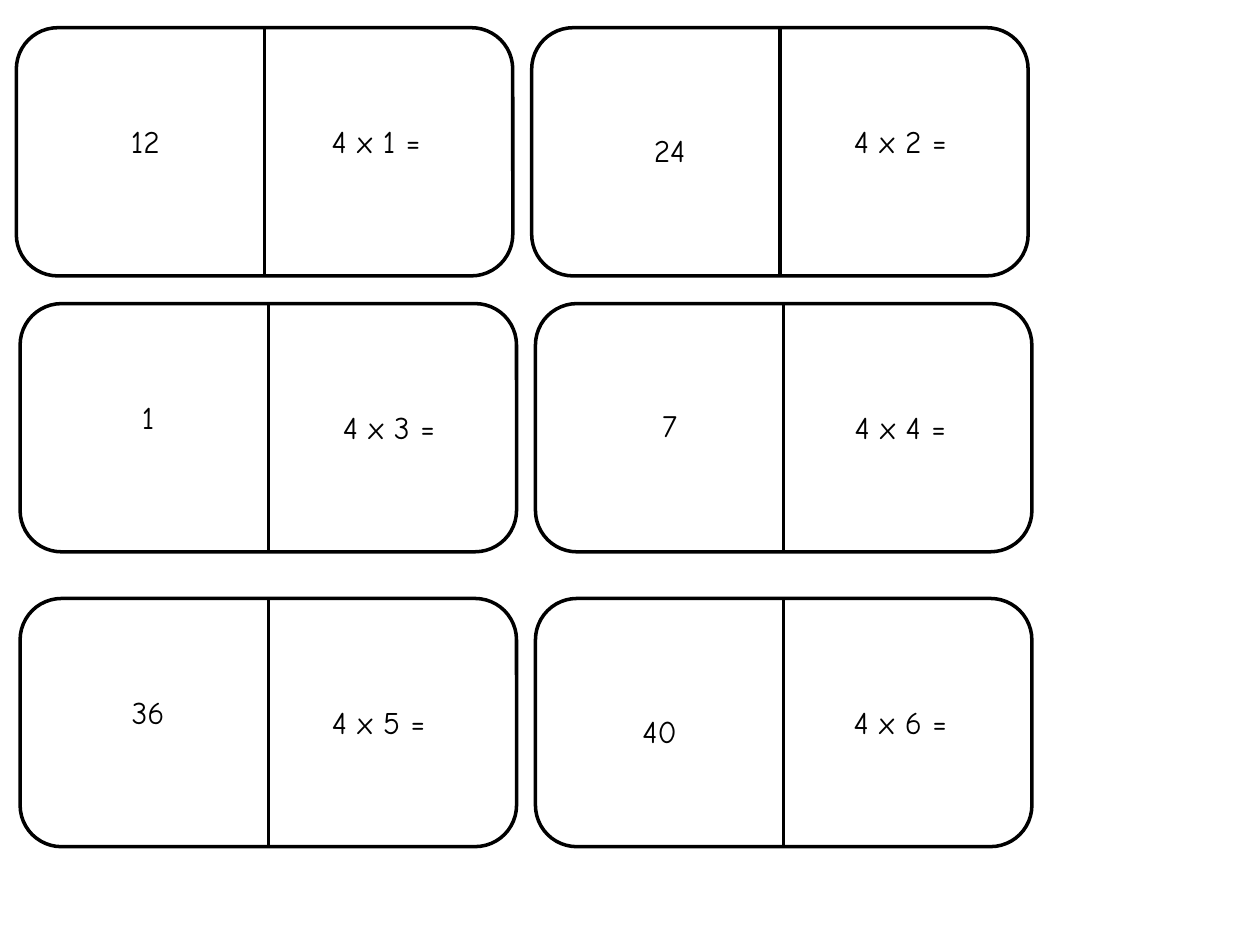
import pptx
import pptx.dml.color
import pptx.enum.shapes
import pptx.enum.text
import pptx.oxml
import pptx.util
from pptx.util import Inches

CARD_WIDTH, CARD_HEIGHT = 3.94, 1.97
COLUMN_STEP = 4.09
TEXT_HEIGHT = 0.4
BLACK = "000000"
ALIGN = pptx.enum.text.PP_ALIGN


def color(hex_string):
    return pptx.dml.color.RGBColor.from_string(hex_string)


def add_label(slide, text, left, top, width, wrap, alignment):
    label = slide.shapes.add_textbox(
        Inches(left), Inches(top), Inches(width), Inches(TEXT_HEIGHT))
    frame = label.text_frame
    frame.word_wrap = wrap
    frame.auto_size = pptx.enum.text.MSO_AUTO_SIZE.SHAPE_TO_FIT_TEXT
    paragraph = frame.paragraphs[0]
    paragraph.alignment = alignment
    run = paragraph.add_run()
    run.text = text
    run.font.name = "Comic Neue"
    run.font.size = pptx.util.Pt(18)
    run.font.color.rgb = color(BLACK)


presentation = pptx.Presentation()
presentation.slide_width = Inches(10)
presentation.slide_height = Inches(7.5)
slide = presentation.slides.add_slide(presentation.slide_layouts[6])

# Domino cards: a rounded outline with a divider down the middle
for row_left, top in [(0.13, 0.22), (0.16, 2.41), (0.16, 4.75)]:
    for column in range(2):
        left = row_left + column * COLUMN_STEP
        middle = left + CARD_WIDTH / 2
        card = slide.shapes.add_group_shape()
        outline = card.shapes.add_shape(
            pptx.enum.shapes.MSO_SHAPE.ROUNDED_RECTANGLE,
            Inches(left), Inches(top), Inches(CARD_WIDTH), Inches(CARD_HEIGHT))
        outline.shadow.inherit = False
        outline.fill.background()
        divider = card.shapes.add_connector(
            pptx.enum.shapes.MSO_CONNECTOR.STRAIGHT,
            Inches(middle), Inches(top), Inches(middle), Inches(top + CARD_HEIGHT))
        divider_properties = divider.line._get_or_add_ln().getparent()
        divider_properties.append(pptx.oxml.parse_xml(
            '<a:effectLst xmlns:a="http://schemas.openxmlformats.org/drawingml/2006/main"/>'))
        for shape in (outline, divider):
            shape.line.color.rgb = color(BLACK)
            shape.line.width = pptx.util.Pt(2)

# Questions on the right halves: text, left, top, width
questions = [
    ("4 x 1 =", 2.5, 0.92, 0.97),
    ("4 x 2 =", 6.64, 0.92, 1.01),
    (" 4 x 3 =", 2.5, 3.19, 1.09),
    ("4 x 4 =", 6.64, 3.19, 1.01),
    ("4 x 5 =", 2.5, 5.53, 1.01),
    ("4 x 6 =", 6.64, 5.53, 1.01),
]
for text, left, top, width in questions:
    add_label(slide, text, left, top, width, False, ALIGN.CENTER)

# Answers on the left halves: text, left, top, width, alignment
answers = [
    ("24", 5, 0.99, 0.63, ALIGN.CENTER),
    ("7", 5, 3.17, 0.63, ALIGN.CENTER),
    ("40", 4.92, 5.6, 0.63, ALIGN.CENTER),
    ("12", 0.94, 0.92, 0.47, ALIGN.LEFT),
    ("1", 0.86, 3.11, 0.63, ALIGN.CENTER),
    ("36", 0.86, 5.45, 0.63, ALIGN.CENTER),
]
for text, left, top, width, alignment in answers:
    add_label(slide, text, left, top, width, True, alignment)

presentation.save("out.pptx")
